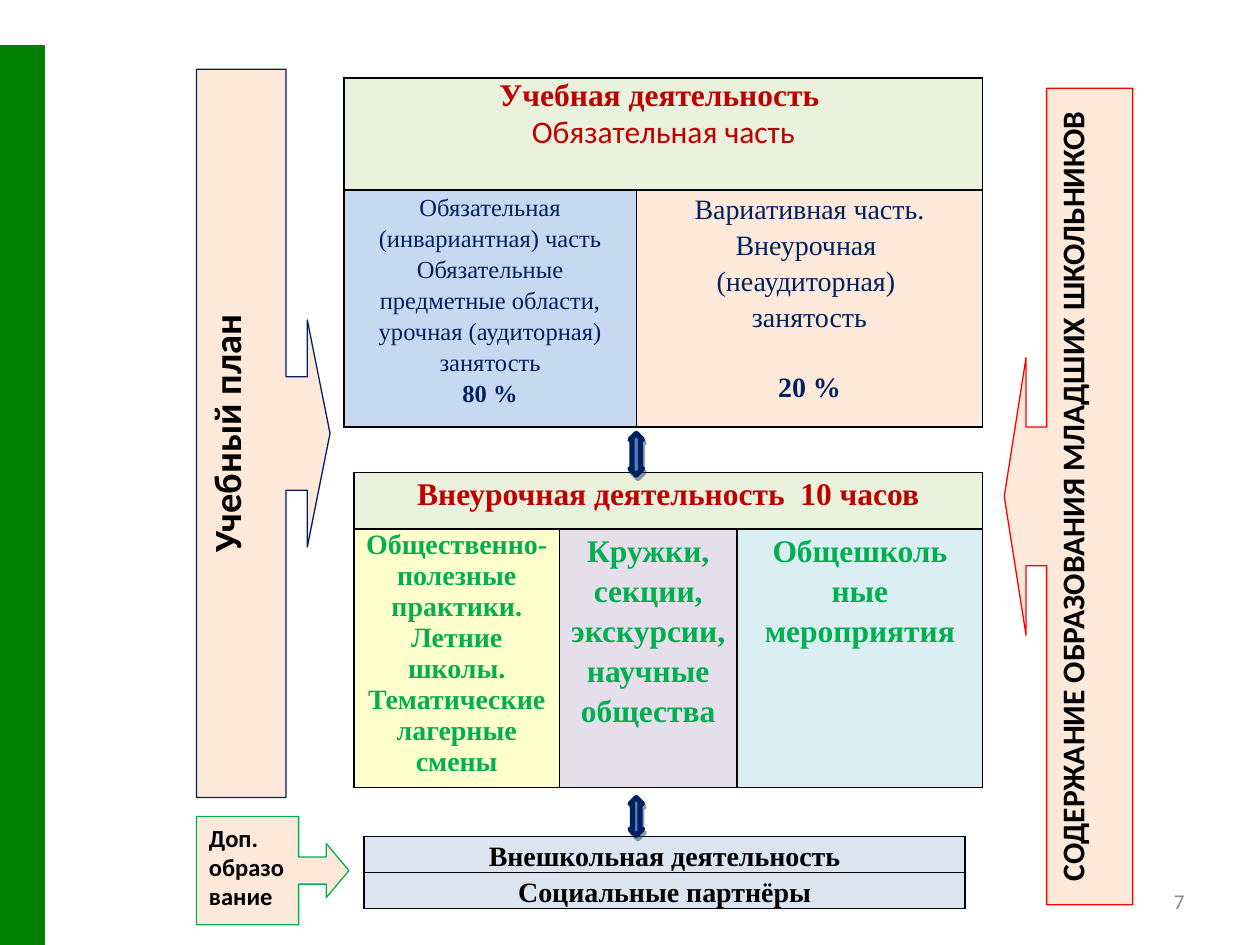
import pptx
import pptx.util
import pptx.dml.color
import pptx.enum.shapes
import pptx.enum.text
import pptx.oxml
import pptx.oxml.ns

COLUMNS, ROWS = 100, 75
UNIT = pptx.util.Inches(0.1)  # one grid step, both ways

COLORS = {
    "green": "008000", "lime": "00B050", "red": "FF0000", "crimson": "C00000",
    "navy": "002060", "blue": "4F81BD", "shade": "243F60", "black": "000000",
    "grey": "8C8C8C", "olive": "EAF1DD", "sky": "C6D9F1", "peach": "FDE9D9",
    "yellow": "FFFFCC", "lilac": "E5DFEC", "aqua": "DAEEF3", "steel": "DBE5F1",
}
SHAPES = pptx.enum.shapes.MSO_SHAPE
ALIGN = pptx.enum.text.PP_ALIGN
ANCHOR = pptx.enum.text.MSO_ANCHOR
SERIF, SANS = "Times New Roman", "Calibri"


def rgb(color):
    return pptx.dml.color.RGBColor.from_string(COLORS[color])


def grid(*steps):
    return [round(step * UNIT) for step in steps]


def set_all(target, values):
    for attribute, value in values.items():
        setattr(target, attribute, value)


def line(text, size, color, font=SERIF, bold=False, **layout):
    """Describe one paragraph; layout holds paragraph attributes."""
    look = {"size": pptx.util.Pt(size), "name": font, "bold": bold}
    return text, color, look, {"alignment": ALIGN.CENTER, **layout}


def write(frame, lines):
    for index, (text, color, look, layout) in enumerate(lines):
        paragraph = frame.add_paragraph() if index else frame.paragraphs[0]
        set_all(paragraph, layout)
        run = paragraph.add_run()
        run.text = text
        set_all(run.font, look)
        run.font.color.rgb = rgb(color)


def add_block(slide, kind, at, fill, outline, width=0.75, adjust=()):
    block = slide.shapes.add_shape(kind, *grid(*at))
    block.shadow.inherit = False
    block.fill.solid()
    block.fill.fore_color.rgb = rgb(fill)
    block.line.color.rgb = rgb(outline)
    block.line.width = pptx.util.Pt(width)
    for index, value in enumerate(adjust):
        block.adjustments[index] = value
    return block


def add_callout(slide, kind, at, outline, adjust, label, upward=True):
    callout = add_block(slide, kind, at, "peach", outline, adjust=adjust)
    frame = callout.text_frame
    set_all(frame, {"word_wrap": True, "vertical_anchor": ANCHOR.TOP})
    if upward:
        frame._txBody.bodyPr.set("vert", "vert270")
    write(frame, [label])


def add_link(slide, top, height, head):
    """Add a double arrow with a hard shadow between two tables."""
    link = add_block(slide, SHAPES.UP_DOWN_ARROW, (50, top, 1, height),
                     "blue", "navy", 3, (0.5, head))
    effects = link._element.spPr.find(pptx.oxml.ns.qn("a:effectLst"))
    effects.append(pptx.oxml.parse_xml(
        f'<a:outerShdw {pptx.oxml.ns.nsdecls("a")} blurRad="0" dist="28000" '
        f'dir="3780000" algn="ctr" rotWithShape="0">'
        f'<a:srgbClr val="{COLORS["shade"]}"><a:alpha val="50000"/></a:srgbClr>'
        f'</a:outerShdw>'))


def add_borders(cell):
    for side in "LRTB":
        cell._tc.get_or_add_tcPr().append(pptx.oxml.parse_xml(
            f'<a:ln{side} {pptx.oxml.ns.nsdecls("a")} w="12700"><a:solidFill>'
            f'<a:srgbClr val="{COLORS["black"]}"/></a:solidFill></a:ln{side}>'))


def add_grid_table(slide, left, top, widths, heights, rows, anchor=ANCHOR.TOP):
    """Add a table; a row with one entry spans all columns."""
    table = slide.shapes.add_table(
        len(heights), len(widths),
        *grid(left, top, sum(widths), sum(heights))).table
    set_all(table, {"first_row": False, "horz_banding": False})
    for column, width in zip(table.columns, grid(*widths)):
        column.width = width
    for row, height in zip(table.rows, grid(*heights)):
        row.height = height
    side = grid(0.7)[0]
    for r, entries in enumerate(rows):
        if len(entries) < len(widths):
            table.cell(r, 0).merge(table.cell(r, len(widths) - 1))
        for c in range(len(widths)):
            cell = table.cell(r, c)
            add_borders(cell)
            if c >= len(entries):
                continue
            fill, lines = entries[c]
            set_all(cell, {"margin_left": side, "margin_right": side,
                           "margin_top": 0, "margin_bottom": 0,
                           "vertical_anchor": anchor})
            cell.fill.solid()
            cell.fill.fore_color.rgb = rgb(fill)
            write(cell.text_frame, lines)


def add_tables(slide):
    loose = {"line_spacing": 1.15}
    required = ["Обязательная (инвариантная) часть",
                "Обязательные предметные области, урочная (аудиторная) занятость"]
    variable = ["Вариативная часть.", "Внеурочная ", "(неаудиторная) ", "занятость"]
    practice = ["Общественно-полезные практики. Летние школы.",
                "Тематические лагерные смены"]
    clubs = ["Кружки, секции, экскурсии, научные общества"]
    events = ["Общешколь", "ные мероприятия"]
    partners = ["Внешкольная деятельность", "Социальные партнёры"]

    add_grid_table(slide, 27.3, 6.2, (23.2, 27.5), (8.9, 18.8), [
        [("olive", [line("Учебная деятельность ", 18, "crimson", bold=True),
                    line("Обязательная часть", 18, "crimson", SANS)])],
        [("sky", [line(text, 14, "navy", **loose) for text in required]
          + [line("80 %", 14, "navy", bold=True, **loose)]),
         ("peach", [line(text, 16, "navy", **loose) for text in variable]
          + [line("20 %", 16, "navy", bold=True,
                  space_before=pptx.util.Pt(20), **loose)])],
    ])
    add_grid_table(slide, 28.1, 37.5, (16.3, 14.1, 19.5), (4.5, 20.5), [
        [("olive", [line("Внеурочная деятельность  10 часов", 18, "crimson",
                         bold=True, **loose)])],
        [("yellow", [line(text, 16, "lime", bold=True) for text in practice])]
        + [(fill, [line(text, 18, "lime", bold=True, **loose) for text in texts])
           for fill, texts in (("lilac", clubs), ("aqua", events))],
    ])
    add_grid_table(slide, 28.9, 66.4, (47.7,), (2.8, 2.8), [
        [("steel", [line(text, 16, "black", bold=True, **loose)])]
        for text in partners], ANCHOR.BOTTOM)


def add_callouts(slide):
    add_callout(slide, SHAPES.LEFT_ARROW_CALLOUT, (79.7, 7, 10.2, 64.8), "red",
                (1.08, 1.08, 0.17, 0.67),
                line("СОДЕРЖАНИЕ ОБРАЗОВАНИЯ МЛАДШИХ ШКОЛЬНИКОВ", 18, "black",
                     SANS, True))
    add_callout(slide, SHAPES.RIGHT_ARROW_CALLOUT, (15.6, 64.8, 12.1, 8.6), "lime",
                (0.25, 0.25, 0.21, 0.67),
                line("Доп. образование", 14, "black", SANS, True,
                     alignment=ALIGN.LEFT), upward=False)
    add_callout(slide, SHAPES.RIGHT_ARROW_CALLOUT, (15.6, 5.5, 10.6, 57.8), "navy",
                (0.85, 0.85, 0.17, 0.67),
                line("Учебный план", 22, "black", SANS, True,
                     space_after=pptx.util.Pt(10)))


def add_page_number(slide, number):
    frame = slide.shapes.add_textbox(*grid(71.7, 69.5, 23.3, 4)).text_frame
    set_all(frame, {"word_wrap": True, "vertical_anchor": ANCHOR.MIDDLE})
    write(frame, [line(number, 12, "grey", SANS, alignment=ALIGN.RIGHT)])


def main():
    deck = pptx.Presentation()
    set_all(deck, {"slide_width": COLUMNS * UNIT, "slide_height": ROWS * UNIT})
    slide = deck.slides.add_slide(deck.slide_layouts[6])
    add_block(slide, SHAPES.RECTANGLE, (0, 3.6, 3.5, ROWS - 3.6), "green", "green")
    add_tables(slide)
    add_link(slide, 63.3, 3, 0.61)
    add_link(slide, 34.4, 3.3, 0.67)
    add_callouts(slide)
    add_page_number(slide, "7")
    deck.save("out.pptx")


if __name__ == "__main__":
    main()
